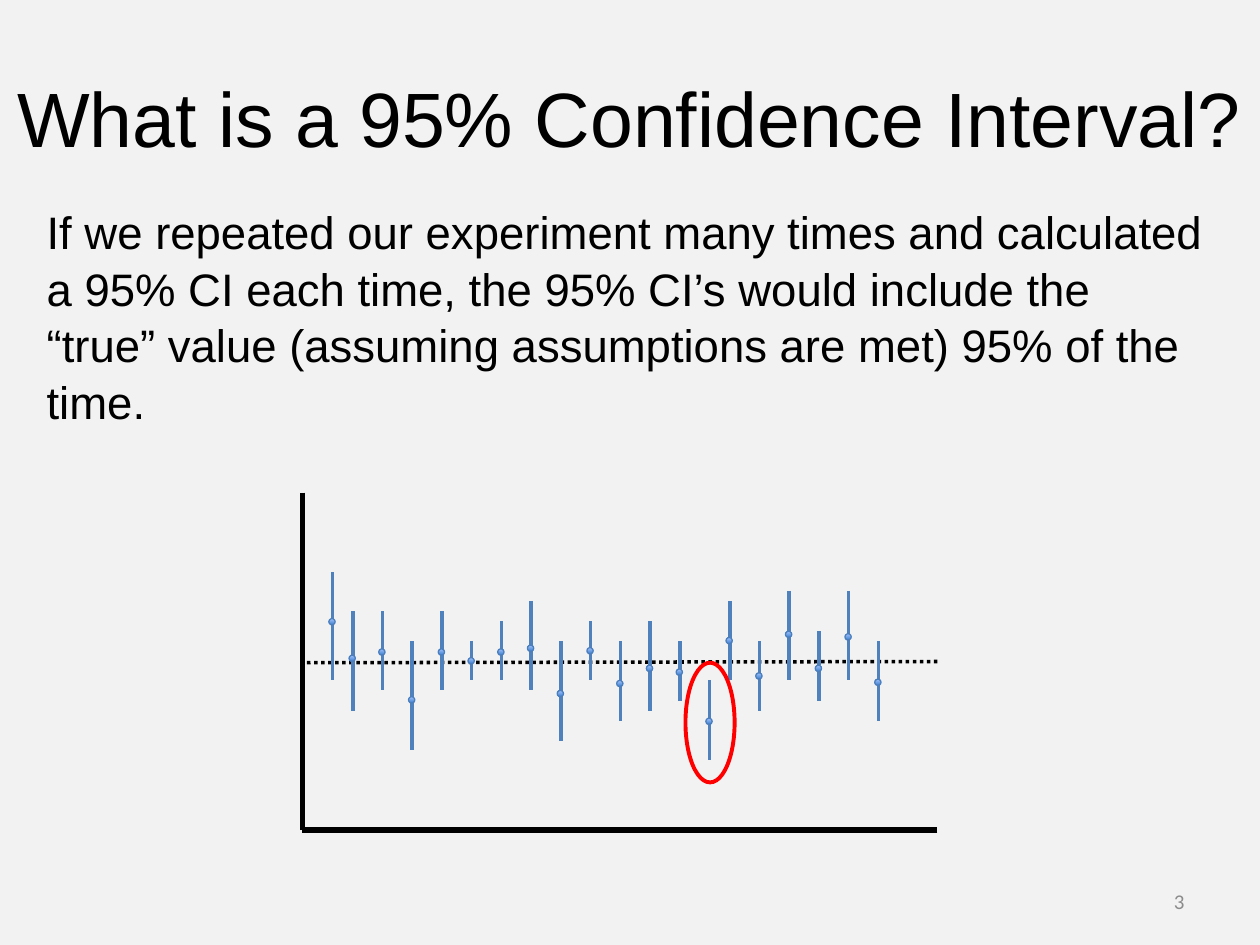
from dataclasses import dataclass
from itertools import accumulate

from pptx import Presentation, oxml
from pptx import util as u
from pptx.dml.color import RGBColor
from pptx.enum import dml, shapes, text


@dataclass(frozen=True)
class Theme:
    back: str = "F2F2F2"
    ink: str = "000000"
    bar: str = "4F81BD"
    rim: str = "4B7EBC"
    deep: str = "3F80CE"
    pale: str = "A4C4FF"
    mark: str = "FF0000"
    mute: str = "8C8C8C"
    font: str = "Arial"
    small: str = "Calibri"
    head: int = 44
    body: int = 26
    note: int = 12


def rgb(code):
    return RGBColor.from_string(code)


def write(frame, words, size, color, font, align, anchor, before=0, lead=1.0):
    frame.word_wrap = True
    frame.auto_size = text.MSO_AUTO_SIZE.NONE
    frame.vertical_anchor = anchor
    para = frame.paragraphs[0]
    para.alignment = align
    para.space_before = u.Pt(before)
    para.line_spacing = lead
    run = para.add_run()
    run.text = words
    run.font.size = u.Pt(size)
    run.font.name = font
    run.font.color.rgb = rgb(color)
    return para


class Deck:
    def __init__(self, theme):
        self.theme = theme
        self.prs = Presentation()
        self.prs.slide_width, self.prs.slide_height = u.Inches(10), u.Inches(7.5)
        self.slide = self.prs.slides.add_slide(self.prs.slide_layouts[1])
        fill = self.slide.background.fill
        fill.solid()
        fill.fore_color.rgb = rgb(theme.back)

    def place(self, item, x, y, w, h):
        item.left, item.top = u.Inches(x), u.Inches(y)
        item.width, item.height = u.Inches(w), u.Inches(h)
        return item.text_frame

    def title(self, words, box):
        t = self.theme
        write(self.place(self.slide.shapes.title, *box), words, t.head, t.ink,
              t.font, text.PP_ALIGN.CENTER, text.MSO_ANCHOR.MIDDLE)

    def body(self, words, box):
        t = self.theme
        para = write(self.place(self.slide.placeholders[1], *box), words, t.body,
                     t.ink, t.font, text.PP_ALIGN.LEFT, text.MSO_ANCHOR.TOP,
                     before=5.2, lead=1.04)
        # Plain paragraph: no bullet, no hanging indent
        props = para._p.get_or_add_pPr()
        props.set("marL", "0")
        props.set("indent", "0")
        props.append(oxml.parse_xml(
            '<a:buNone xmlns:a="http://schemas.openxmlformats.org/drawingml/2006/main"/>'))

    def number(self, words, box):
        t = self.theme
        item = self.slide.shapes.add_textbox(*map(u.Inches, box))
        write(item.text_frame, words, t.note, t.mute, t.small,
              text.PP_ALIGN.RIGHT, text.MSO_ANCHOR.MIDDLE)

    def line(self, start, end, color, width, dash=None):
        item = self.slide.shapes.add_connector(
            shapes.MSO_CONNECTOR.STRAIGHT, *map(u.Inches, (*start, *end)))
        item.line.color.rgb = rgb(color)
        item.line.width = u.Pt(width)
        if dash:
            item.line.dash_style = dash
        item._element.spPr.append(oxml.parse_xml(
            '<a:effectLst xmlns:a="http://schemas.openxmlformats.org/drawingml/2006/main"/>'))

    def oval(self, box, color, width):
        item = self.slide.shapes.add_shape(
            shapes.MSO_SHAPE.OVAL, *map(u.Inches, box))
        item.shadow.inherit = False
        item.fill.background()
        item.line.color.rgb = rgb(color)
        item.line.width = u.Pt(width)
        return item

    def dot(self, x, y, size=0.05):
        item = self.oval((x, y, size, size), self.theme.rim, 0.75)
        item.fill.gradient()
        item.fill.gradient_angle = 90
        for stop, place, code in zip(item.fill.gradient_stops, (0, 1),
                                     (self.theme.deep, self.theme.pale)):
            stop.position = place
            stop.color.rgb = rgb(code)


# Interval top, interval bottom, top of the estimate's dot
SPANS = [
    (4.54, 5.4, 4.91), (4.85, 5.64, 5.2), (4.85, 5.48, 5.15),
    (5.09, 5.95, 5.53), (4.85, 5.48, 5.15), (5.09, 5.4, 5.22),
    (4.93, 5.4, 5.15), (4.77, 5.48, 5.12), (5.09, 5.88, 5.48),
    (4.93, 5.4, 5.14), (5.09, 5.72, 5.4), (4.93, 5.64, 5.28),
    (5.09, 5.56, 5.31), (5.4, 6.03, 5.7), (4.77, 5.4, 5.06),
    (5.09, 5.64, 5.34), (4.69, 5.4, 5.01), (5.01, 5.56, 5.28),
    (4.69, 5.4, 5.03), (5.09, 5.72, 5.39),
]
STEP, NEAR = 0.236, 0.16
LEFT, RIGHT, TOP, BASE = 2.4, 7.44, 3.91, 6.59


def main():
    theme = Theme()
    deck = Deck(theme)

    # Heading and explanation
    deck.title("What is a 95% Confidence Interval?", (0, 0.3, 10, 1.25))
    deck.body("If we repeated our experiment many times and calculated a 95% CI "
              "each time, the 95% CI’s would include the “true” value (assuming "
              "assumptions are met) 95% of the time.", (0.27, 1.55, 9.45, 2.2))

    # Axes and true value
    deck.line((LEFT, TOP), (LEFT, BASE), theme.ink, 3.25)
    deck.line((RIGHT, BASE), (LEFT, BASE), theme.ink, 3.25)
    deck.line((RIGHT, 5.25), (LEFT, 5.26), theme.ink, 2,
              dml.MSO_LINE.ROUND_DOT)

    # Intervals, evenly spaced but for two narrow gaps
    gaps = [NEAR] + [STEP] * 12 + [NEAR] + [STEP] * 5
    cols = list(accumulate(gaps, initial=2.64))
    for x, (high, low, _) in zip(cols, SPANS):
        deck.line((x, high), (x, low), theme.bar, 2)
    for x, (_, _, mid) in zip(cols, SPANS):
        deck.dot(x - 0.03, mid)

    # Ring round the interval that misses
    deck.oval((5.44, 5.26, 0.39, 0.95), theme.mark, 2.25)

    deck.number("3", (7.17, 6.95, 2.33, 0.4))
    deck.prs.save("out.pptx")


if __name__ == "__main__":
    main()
